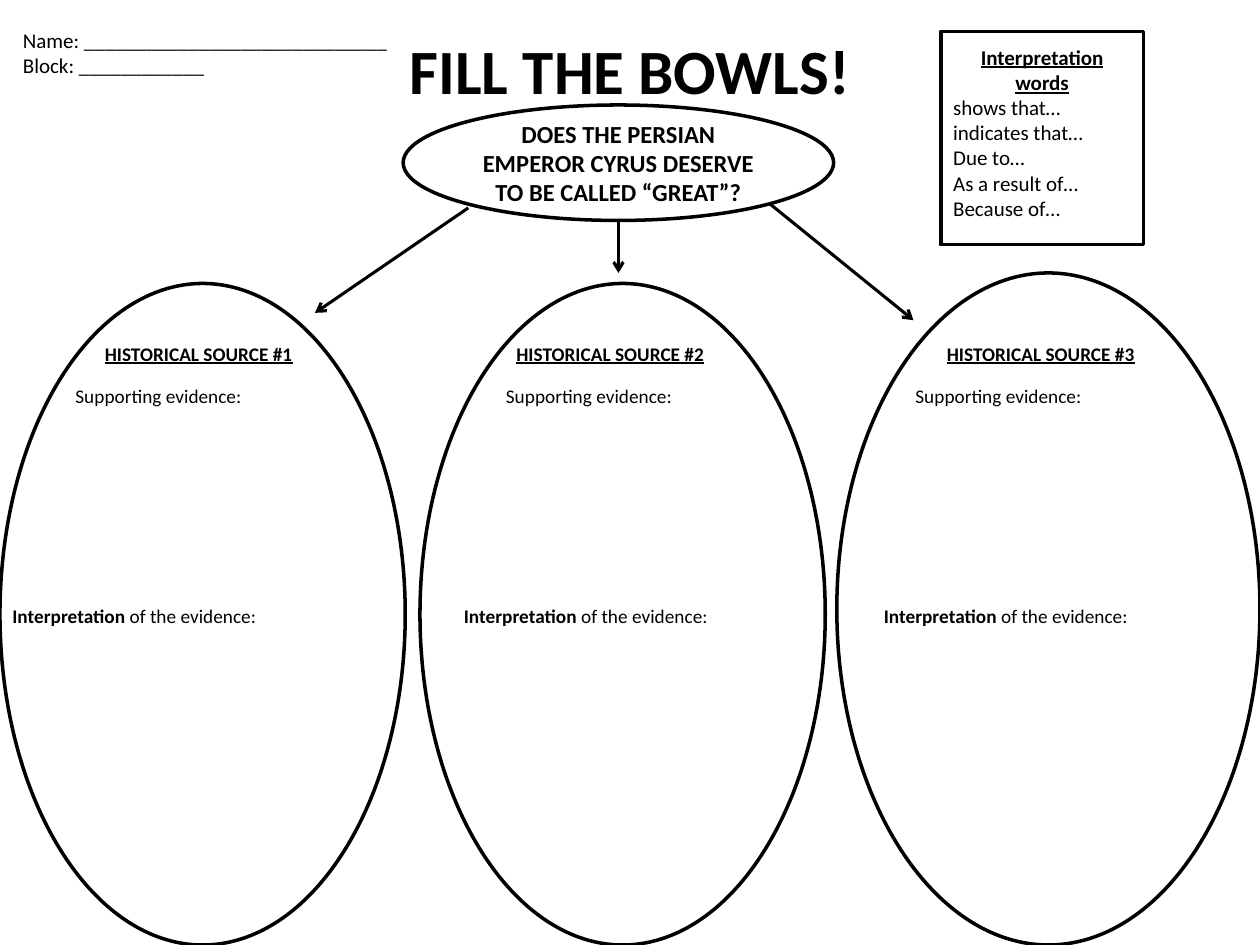
import lxml.etree
import pptx
import pptx.dml.color
import pptx.enum.shapes
import pptx.enum.text
import pptx.oxml.ns
import pptx.util

BLACK = pptx.dml.color.RGBColor(0x00, 0x00, 0x00)
WHITE = pptx.dml.color.RGBColor(0xFF, 0xFF, 0xFF)
FONT = "Calibri"
SHAPES = pptx.enum.shapes.MSO_SHAPE
LEFT = pptx.enum.text.PP_ALIGN.LEFT
CENTER = pptx.enum.text.PP_ALIGN.CENTER
MIDDLE = pptx.enum.text.MSO_ANCHOR.MIDDLE
TOP = pptx.enum.text.MSO_ANCHOR.TOP

presentation = pptx.Presentation()
presentation.slide_width = pptx.util.Inches(10)
presentation.slide_height = pptx.util.Inches(7.5)
CELL = presentation.slide_width / 120  # the slide is 120 columns by 90 rows
slide = presentation.slides.add_slide(presentation.slide_layouts[6])


def add_block(box, paragraphs=(), size=11, outline=None, anchor=TOP):
    """Add a text box, or an outlined shape, at box = column, row, width, height.

    Each paragraph is (alignment, [(text, bold, underline), ...]).
    """
    place = [round(value * CELL) for value in box]
    if outline is None:
        shape = slide.shapes.add_textbox(*place)
    else:
        shape = slide.shapes.add_shape(outline, *place)
        shape.shadow.inherit = False
        shape.fill.solid()
        shape.fill.fore_color.rgb = WHITE
        shape.line.color.rgb = BLACK
        shape.line.width = pptx.util.Pt(2)
    frame = shape.text_frame
    frame.word_wrap = True
    frame.vertical_anchor = anchor
    for index, (alignment, runs) in enumerate(paragraphs):
        paragraph = frame.add_paragraph() if index else frame.paragraphs[0]
        paragraph.alignment = alignment
        for text, bold, underline in runs:
            run = paragraph.add_run()
            run.text = text
            run.font.name = FONT
            run.font.size = pptx.util.Pt(size)
            run.font.bold = bold
            run.font.underline = underline
            run.font.color.rgb = BLACK
    return shape


# Header
name_lines = ["Name: _____________________________", "Block: ____________"]
add_block((1, 2, 37.5, 6), [(LEFT, [(line, False, False)]) for line in name_lines], 12)
add_block((6, 0.4, 108, 12.4), [(CENTER, [("FILL THE BOWLS!", True, False)])], 36, anchor=MIDDLE)
question = "DOES THE PERSIAN EMPEROR CYRUS DESERVE TO BE CALLED “GREAT”?"
add_block((38.4, 10, 41, 11), [(CENTER, [(question, True, False)])], 14, SHAPES.OVAL, MIDDLE)

phrases = ["shows that…", "indicates that…", "Due to…", "As a result of…", "Because of…"]
word_bank = add_block(
    (89.6, 3, 19.3, 20.3),
    [(CENTER, [("Interpretation words", True, True)])]
    + [(LEFT, [(phrase, False, False)]) for phrase in phrases],
    12, SHAPES.RECTANGLE)
word_bank.text_frame.margin_top = pptx.util.Inches(0.1)

# Bowls: outline, then the columns of heading, evidence and interpretation
bowls = [
    ((0, 27, 38.6, 63), 8.8, 6, 0),
    ((40, 27, 38.6, 63), 48, 47, 43),
    ((79.7, 26, 40.3, 64), 89, 86, 83),
]
for number, (bowl, heading, evidence, interpretation) in enumerate(bowls, start=1):
    add_block(bowl, outline=SHAPES.OVAL)
    add_block((heading, 32, 22.1, 3.5), [(LEFT, [(f"HISTORICAL SOURCE #{number}", True, True)])])
    add_block((evidence, 36, 18.4, 3.5), [(LEFT, [("Supporting evidence:", False, False)])])
    add_block((interpretation, 57, 26.2, 3.5),
              [(LEFT, [("Interpretation ", True, False), ("of the evidence:", False, False)])])

# Arrows from the question to the bowls
arrows = [(44.6, 19.8, 30, 29.8), (58.9, 21, 58.9, 26), (73.3, 19.4, 87, 30.5)]
for ends in arrows:
    arrow = slide.shapes.add_connector(
        pptx.enum.shapes.MSO_CONNECTOR.STRAIGHT, *[round(value * CELL) for value in ends])
    arrow.line.color.rgb = BLACK
    arrow.line.width = pptx.util.Pt(1.75)
    line = arrow.line._get_or_add_ln()
    lxml.etree.SubElement(line, pptx.oxml.ns.qn("a:tailEnd"), type="arrow")
    lxml.etree.SubElement(arrow._element.spPr, pptx.oxml.ns.qn("a:effectLst"))

presentation.save("out.pptx")
